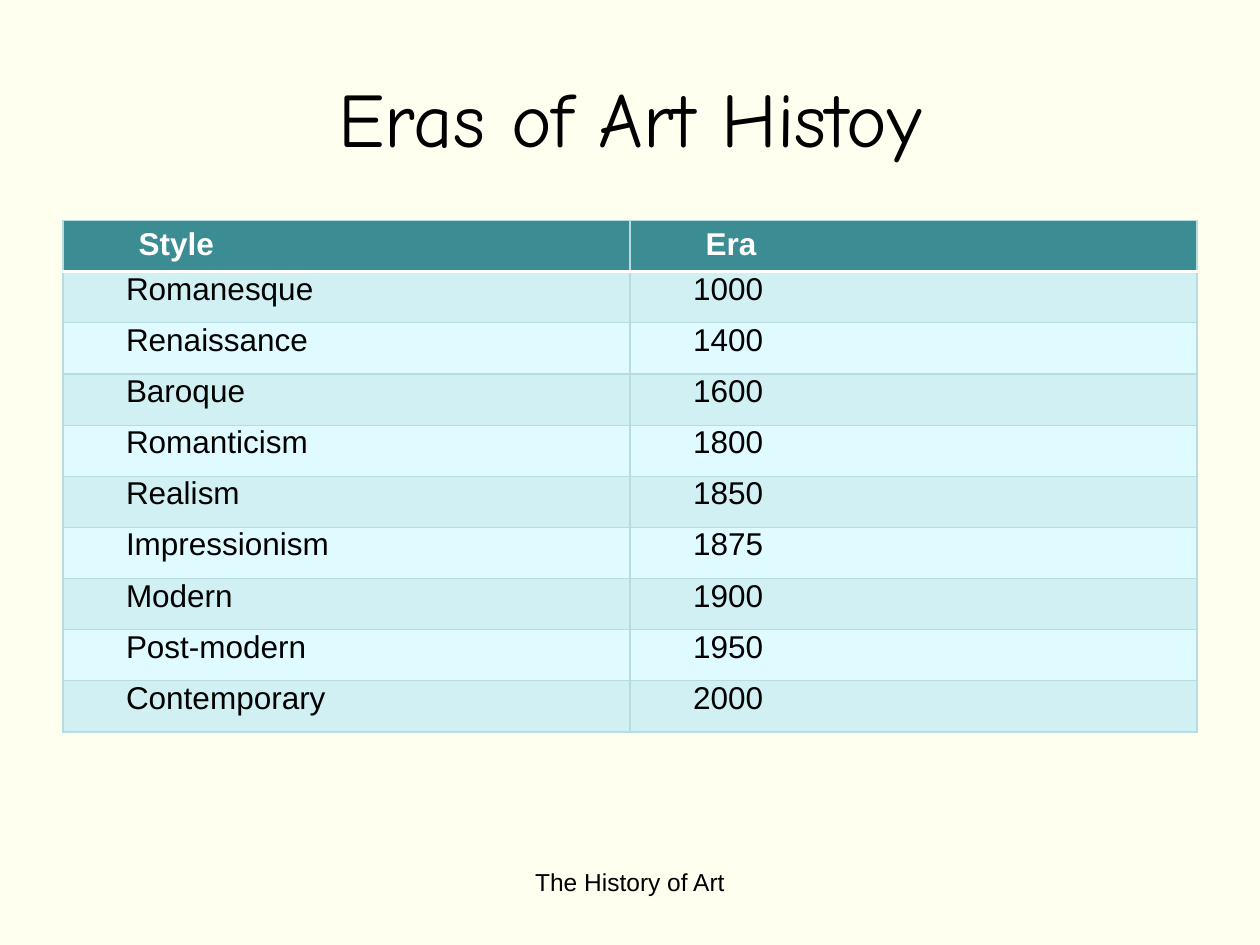
from lxml import etree
from pptx import Presentation
from pptx.dml.color import RGBColor
from pptx.enum.text import MSO_ANCHOR, PP_ALIGN
from pptx.oxml.ns import qn
from pptx.util import Pt

CENTER, LEFT = PP_ALIGN.CENTER, PP_ALIGN.LEFT
MIDDLE, TOP = MSO_ANCHOR.MIDDLE, MSO_ANCHOR.TOP

CREAM = RGBColor(0xFF, 0xFF, 0xEF)
BLACK = RGBColor(0x00, 0x00, 0x00)
WHITE = RGBColor(0xFF, 0xFF, 0xFF)
TEAL = RGBColor(0x3C, 0x8C, 0x93)
BORDER = RGBColor(0xB6, 0xDC, 0xDF)
BAND = RGBColor(0xD0, 0xF0, 0xF3)
PALE = RGBColor(0xDF, 0xFB, 0xFF)

ERAS = [
    ("Style", "Era"),
    ("Romanesque", "1000"),
    ("Renaissance", "1400"),
    ("Baroque", "1600"),
    ("Romanticism", "1800"),
    ("Realism", "1850"),
    ("Impressionism", "1875"),
    ("Modern", "1900"),
    ("Post-modern", "1950"),
    ("Contemporary", "2000"),
]
ROW_HEIGHT = 29.23
COLUMN_WIDTH = 324


def add_run(p, text, font, size, color, bold=False):
    """Add one formatted run to a paragraph."""
    r = p.add_run()
    r.text = text
    r.font.name = font
    r.font.size = Pt(size)
    r.font.color.rgb = color
    r.font.bold = bold


def add_title(s, text):
    """Place and fill the title placeholder."""
    sp = s.shapes.title
    sp.left, sp.top, sp.width, sp.height = Pt(36), Pt(21.6), Pt(648), Pt(90)
    tf = sp.text_frame
    tf.word_wrap = True
    tf.vertical_anchor = MIDDLE
    p = tf.paragraphs[0]
    p.alignment = CENTER
    add_run(p, text, "Comic Neue", 44, BLACK)


def add_footer(s, text):
    """Add the centred line at the foot of the slide."""
    sp = s.shapes.add_textbox(Pt(246), Pt(492), Pt(228), Pt(37.5))
    tf = sp.text_frame
    tf.word_wrap = True
    tf.vertical_anchor = TOP
    p = tf.paragraphs[0]
    p.alignment = CENTER
    add_run(p, text, "Arial", 14, BLACK)


def set_border(cell, side, color, width):
    """Draw one side of a cell's border."""
    tcPr = cell._tc.get_or_add_tcPr()
    ln = etree.SubElement(tcPr, qn(f"a:ln{side}"), w=str(Pt(width)))
    fill = etree.SubElement(ln, qn("a:solidFill"))
    etree.SubElement(fill, qn("a:srgbClr"), val=str(color))


def fill_cell(cell, text, row):
    """Format a cell by its row and write its text."""
    header = row == 0
    edges = {side: (BORDER, 0.75) for side in "LRTB"}
    if header:
        edges["B"] = (WHITE, 2)
    elif row == 1:
        edges["T"] = (WHITE, 2)
    for side, (color, width) in edges.items():
        set_border(cell, side, color, width)
    cell.fill.solid()
    cell.fill.fore_color.rgb = TEAL if header else BAND if row % 2 else PALE
    cell.vertical_anchor = TOP
    if not header:
        cell.margin_left = cell.margin_right = Pt(0)
        cell.margin_top = cell.margin_bottom = Pt(0)
    p = cell.text_frame.paragraphs[0]
    p.level = 1
    p.alignment = LEFT
    pPr = p._p.get_or_add_pPr()
    pPr.set("marL", str(Pt(36)))
    pPr.set("indent", "0")
    add_run(p, text, "Arial", 18, WHITE if header else BLACK, header)


def add_era_table(s, rows):
    """Add the table of styles and eras."""
    cols = len(rows[0])
    frame = s.shapes.add_table(len(rows), cols, Pt(36), Pt(126),
                               Pt(COLUMN_WIDTH * cols), Pt(ROW_HEIGHT * len(rows)))
    table = frame.table
    for i, values in enumerate(rows):
        table.rows[i].height = Pt(ROW_HEIGHT)
        for j, text in enumerate(values):
            fill_cell(table.cell(i, j), text, i)


def main():
    """Build and save the slide."""
    prs = Presentation()
    prs.slide_width, prs.slide_height = Pt(720), Pt(540)
    s = prs.slides.add_slide(prs.slide_layouts[5])
    s.background.fill.solid()
    s.background.fill.fore_color.rgb = CREAM
    add_title(s, "Eras of Art Histoy")
    add_era_table(s, ERAS)
    add_footer(s, "The History of Art")
    prs.save("out.pptx")


if __name__ == "__main__":
    main()
